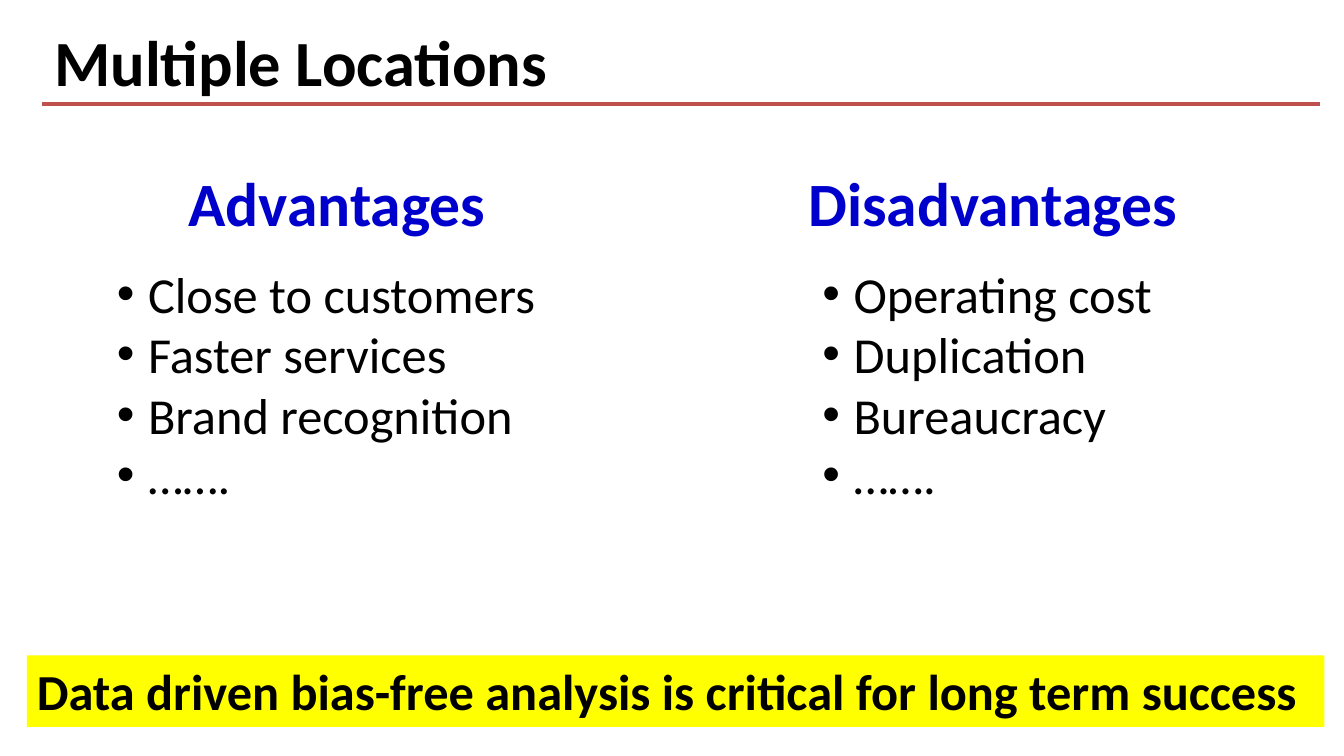
from dataclasses import dataclass

from lxml.etree import SubElement
from pptx import Presentation
from pptx.dml.color import RGBColor
from pptx.enum.shapes import MSO_CONNECTOR, MSO_SHAPE
from pptx.enum.text import MSO_ANCHOR, MSO_AUTO_SIZE, PP_ALIGN
from pptx.oxml.ns import qn
from pptx.util import Inches, Pt


@dataclass(frozen=True)
class Theme:
    font: str = "Calibri"
    ink: str = "000000"
    heading: str = "0000CC"
    rule: str = "C0504D"
    highlight: str = "FFFF00"
    title_size: int = 46
    heading_size: int = 44
    body_size: int = 36
    rule_width: int = 3
    bullet_indent: float = 0.31


def write_text(frame, lines, *, font, size, color, bold=False, wrap=False, indent=None):
    """Fill a text frame, one paragraph a line; an indent adds bullets."""
    frame.word_wrap = wrap
    frame.auto_size = MSO_AUTO_SIZE.SHAPE_TO_FIT_TEXT
    frame.vertical_anchor = MSO_ANCHOR.TOP
    for number, line in enumerate(lines):
        para = frame.add_paragraph() if number else frame.paragraphs[0]
        para.alignment = PP_ALIGN.LEFT
        span = para.add_run()
        span.text = line
        span.font.name = font
        span.font.size = Pt(size)
        span.font.bold = bold
        span.font.color.rgb = RGBColor.from_string(color)
        if indent:
            properties = para._p.get_or_add_pPr()
            properties.set("marL", str(Inches(indent)))
            properties.set("indent", str(-Inches(indent)))
            SubElement(properties, qn("a:buFont")).set("typeface", "Arial")
            SubElement(properties, qn("a:buChar")).set("char", "•")


class PageBuilder:
    """Places elements on a page; lengths are percent of its width and height."""

    def __init__(self, deck, theme):
        self.deck = deck
        self.theme = theme
        self.page = deck.slides.add_slide(deck.slide_layouts[6])

    def across(self, share):
        return round(self.deck.slide_width * share / 100)

    def down(self, share):
        return round(self.deck.slide_height * share / 100)

    def area(self, left, top, width, height):
        return self.across(left), self.down(top), self.across(width), self.down(height)

    def text(self, lines, area, size, color=None, **style):
        box = self.page.shapes.add_textbox(*self.area(*area))
        write_text(box.text_frame, lines, font=self.theme.font, size=size,
                   color=color or self.theme.ink, **style)

    def rule(self, left, right, top):
        line = self.page.shapes.add_connector(
            MSO_CONNECTOR.STRAIGHT, self.across(left), self.down(top),
            self.across(right), self.down(top))
        line.line.color.rgb = RGBColor.from_string(self.theme.rule)
        line.line.width = Pt(self.theme.rule_width)
        SubElement(line._element.spPr, qn("a:effectLst"))

    def banner(self, message, area):
        box = self.page.shapes.add_shape(MSO_SHAPE.RECTANGLE, *self.area(*area))
        box.shadow.inherit = False
        box.fill.solid()
        box.fill.fore_color.rgb = RGBColor.from_string(self.theme.highlight)
        box.line.fill.background()
        write_text(box.text_frame, [message], font=self.theme.font,
                   size=self.theme.body_size, color=self.theme.ink, bold=True, wrap=True)


# Each column: heading, its left and width, points, their left and width
COLUMNS = [
    ("Advantages", 13.3, 23.8,
     ["Close to customers", "Faster services", "Brand recognition", "……."], 7.95, 33),
    ("Disadvantages", 59.4, 29.2,
     ["Operating cost", "Duplication", "Bureaucracy", "……."], 60.45, 26.3),
]


def main():
    deck = Presentation()
    deck.slide_width, deck.slide_height = Inches(13.33), Inches(7.5)
    theme = Theme()
    builder = PageBuilder(deck, theme)

    # Title and rule
    builder.text(["Multiple Locations"], (3.3, 2.3, 38.7, 11.7), theme.title_size, bold=True)
    builder.rule(3.15, 98.2, 13.75)

    # Two columns of points
    for heading, heading_left, heading_width, points, left, width in COLUMNS:
        builder.text([heading], (heading_left, 21.1, heading_width, 11.2),
                     theme.heading_size, theme.heading, bold=True)
        builder.text(points, (left, 34.1, width, 33.6), theme.body_size,
                     indent=theme.bullet_indent)

    # Closing message
    builder.banner("Data driven bias-free analysis is critical for long term success",
                   (2, 86.7, 96.55, 9.45))

    deck.save("out.pptx")


if __name__ == "__main__":
    main()
